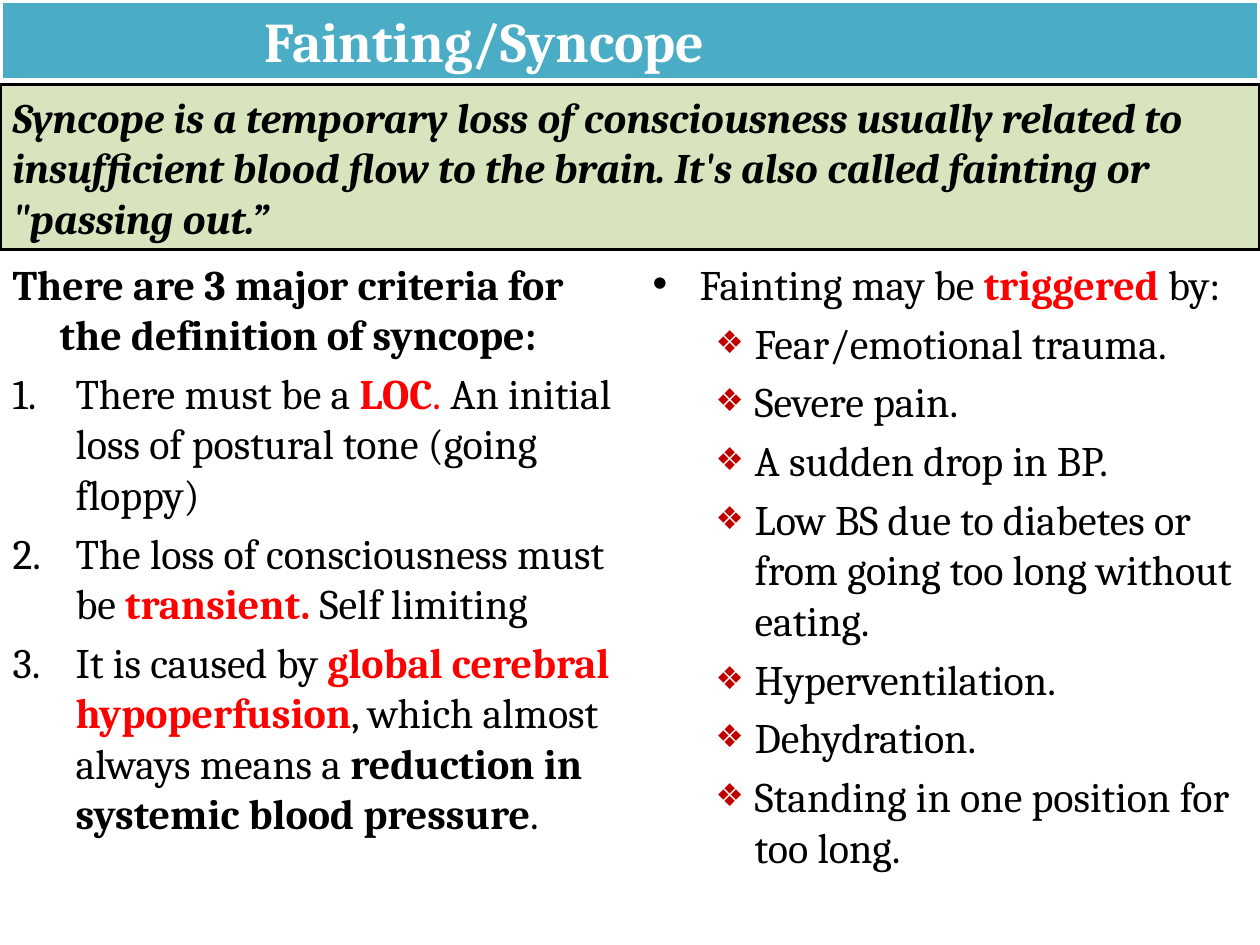
from lxml.etree import SubElement
from pptx import Presentation
from pptx.dml.color import RGBColor
from pptx.enum.shapes import MSO_SHAPE
from pptx.enum.text import MSO_ANCHOR, MSO_AUTO_SIZE, PP_ALIGN
from pptx.oxml.ns import qn
from pptx.util import Cm, Pt

TEAL = RGBColor(0x4B, 0xAC, 0xC6)
GREEN = RGBColor(0xD7, 0xE4, 0xBD)
WHITE = RGBColor(0xFF, 0xFF, 0xFF)
BLACK = RGBColor(0x00, 0x00, 0x00)
RED = RGBColor(0xFF, 0x00, 0x00)
WINE = RGBColor(0xC0, 0x00, 0x00)

PLAIN = (BLACK, False)
BOLD = (BLACK, True)
ALERT = (RED, True)

CLAIM = (
    "Syncope is a temporary loss of consciousness usually related to "
    "insufficient blood flow to the brain. It's also called fainting or "
    "\"passing out.”"
)
HEAD = [("There are 3 major criteria for the definition of syncope:", BOLD)]
RULES = [
    [("There must be a ", PLAIN), ("LOC", ALERT), (".", (RED, False)),
     (" An initial loss of postural tone (going floppy)", PLAIN)],
    [("The loss of consciousness must be ", PLAIN), ("transient. ", ALERT),
     ("Self limiting", PLAIN)],
    [("It is caused by ", PLAIN), ("global cerebral hypoperfusion", ALERT),
     (", which almost always means a ", PLAIN),
     ("reduction in systemic blood pressure", BOLD), (".", PLAIN)],
]
LEAD = [("Fainting may be ", PLAIN), ("triggered", ALERT), (" by:", PLAIN)]
CAUSES = [
    "Fear/emotional trauma.",
    "Severe pain.",
    "A sudden drop in BP.",
    "Low BS due to diabetes or from going too long without eating.",
    "Hyperventilation.",
    "Dehydration.",
    "Standing in one position for too long.",
]


def place(shape, left, top, width, height):
    """Move and size a shape, in centimetres."""
    shape.left, shape.top = Cm(left), Cm(top)
    shape.width, shape.height = Cm(width), Cm(height)


def style(run, color, bold, size=24):
    """Format one run."""
    font = run.font
    font.name, font.size, font.bold = "Cambria", Pt(size), bold
    font.color.rgb = color


def paint(shape, fill, line, width):
    """Set the fill and outline of a shape."""
    shape.fill.solid()
    shape.fill.fore_color.rgb = fill
    shape.line.color.rgb = line
    shape.line.width = Pt(width)
    shape.shadow.inherit = False


def indent(para, margin, hang=0):
    """Set the left margin and hanging indent of a paragraph."""
    props = para._p.get_or_add_pPr()
    props.set("marL", str(Cm(margin)))
    props.set("indent", str(-Cm(hang)))
    return props


def mark(props, kind, color=None, **attrs):
    """Add a bullet element, with a small coloured sign if asked."""
    if color:
        tint = SubElement(props, qn("a:buClr"))
        SubElement(tint, qn("a:srgbClr"), val=str(color))
        SubElement(props, qn("a:buSzPct"), val="75000")
    SubElement(props, qn(kind), **attrs)


def add_item(frame, parts, margin, hang, kind, level=0, color=None, **attrs):
    """Write one list paragraph from (text, look) parts."""
    para = frame.paragraphs[0]
    if para.runs:
        para = frame.add_paragraph()
    else:
        para.space_before = Pt(0)
    para.level = level
    mark(indent(para, margin, hang), kind, color, **attrs)
    for text, look in parts:
        run = para.add_run()
        run.text = text
        style(run, *look)


def add_title(slide):
    """Write the title band."""
    title = slide.shapes.title
    place(title, 0, 0, 25.4, 1.63)
    paint(title, TEAL, WHITE, 3)
    frame = title.text_frame
    frame.text = "Fainting/Syncope"
    frame.auto_size = MSO_AUTO_SIZE.NONE
    frame.vertical_anchor = MSO_ANCHOR.MIDDLE
    para = frame.paragraphs[0]
    para.alignment = PP_ALIGN.LEFT
    indent(para, 5.08)
    style(para.runs[0], WHITE, True, 32)


def add_claim(slide):
    """Draw the definition box."""
    box = slide.shapes.add_shape(
        MSO_SHAPE.RECTANGLE, Cm(0), Cm(1.7), Cm(25.4), Cm(3.33))
    paint(box, GREEN, BLACK, 2)
    frame = box.text_frame
    frame.word_wrap = True
    frame.vertical_anchor = MSO_ANCHOR.MIDDLE
    frame.text = CLAIM
    para = frame.paragraphs[0]
    para.alignment = PP_ALIGN.LEFT
    style(para.runs[0], *BOLD)
    para.runs[0].font.italic = True


def open_list(body, left, width, height):
    """Place a list body and return its text frame."""
    place(body, left, 5.08, width, height)
    frame = body.text_frame
    frame.auto_size = MSO_AUTO_SIZE.NONE
    return frame


def main():
    """Build and save the slide."""
    deck = Presentation()
    deck.slide_width, deck.slide_height = Cm(25.4), Cm(19.05)
    slide = deck.slides.add_slide(deck.slide_layouts[3])
    add_title(slide)

    left = open_list(slide.placeholders[1], 0, 12.9, 13.97)
    add_item(left, HEAD, 0.95, 0.95, "a:buNone")
    for rule in RULES:
        add_item(left, rule, 1.27, 1.27, "a:buAutoNum", type="arabicPeriod")

    right = open_list(slide.placeholders[2], 12.9, 12.5, 13.13)
    add_item(right, LEAD, 0.95, 0.95, "a:buChar", char="•")
    for cause in CAUSES:
        add_item(right, [(cause, PLAIN)], 2.06, 0.79, "a:buChar",
                 level=1, color=WINE, char="❖")

    add_claim(slide)
    deck.save("out.pptx")


if __name__ == "__main__":
    main()
